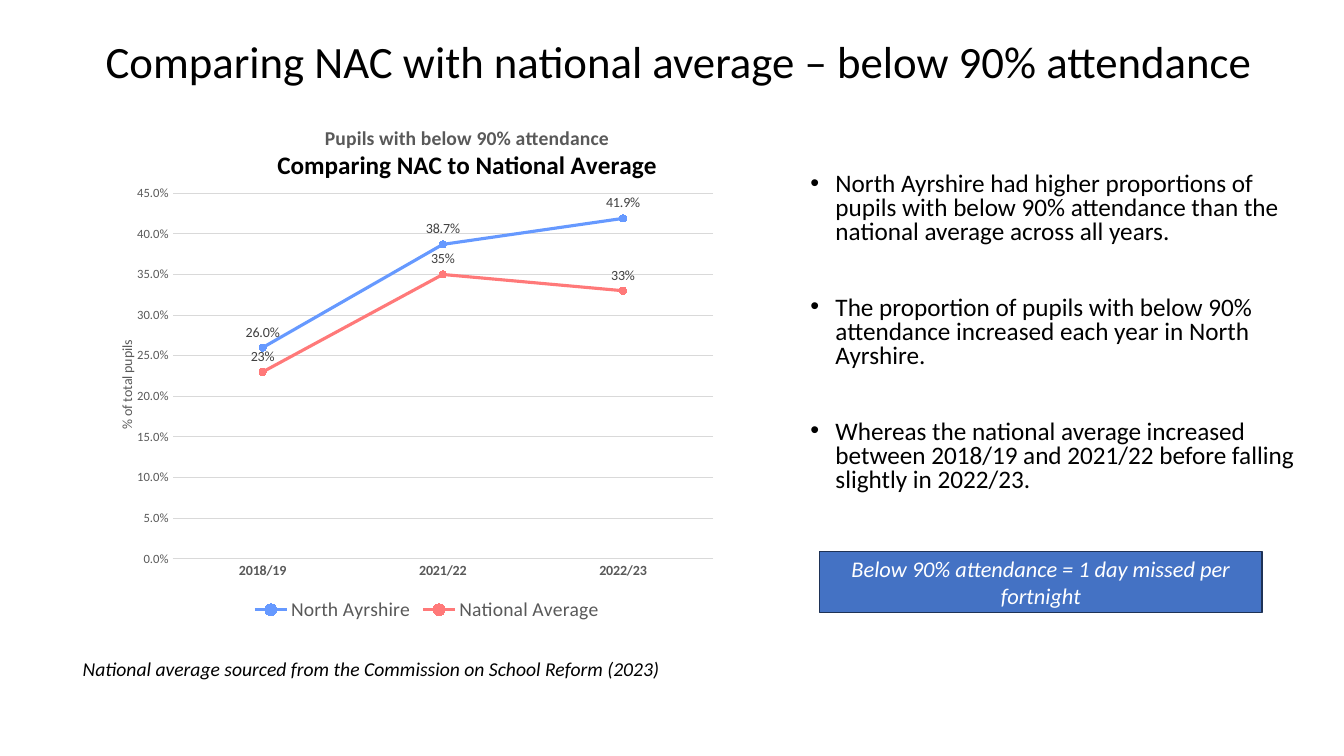
from dataclasses import dataclass

from lxml import etree
from pptx import Presentation
from pptx.chart.data import CategoryChartData
from pptx.dml.color import RGBColor
from pptx.enum.chart import XL_CHART_TYPE, XL_LABEL_POSITION, XL_LEGEND_POSITION, XL_MARKER_STYLE, XL_TICK_MARK
from pptx.enum.shapes import MSO_SHAPE
from pptx.enum.text import MSO_ANCHOR, PP_ALIGN
from pptx.oxml import parse_xml
from pptx.oxml.ns import nsdecls, qn
from pptx.util import Pt

LINE_MARKERS = XL_CHART_TYPE.LINE_MARKERS
ABOVE = XL_LABEL_POSITION.ABOVE
LEGEND_BOTTOM = XL_LEGEND_POSITION.BOTTOM
CIRCLE = XL_MARKER_STYLE.CIRCLE
NO_TICK = XL_TICK_MARK.NONE
RECTANGLE = MSO_SHAPE.RECTANGLE
TOP, MIDDLE = MSO_ANCHOR.TOP, MSO_ANCHOR.MIDDLE
LEFT, CENTER = PP_ALIGN.LEFT, PP_ALIGN.CENTER


@dataclass(frozen=True)
class Theme:
    font: str = "Calibri"
    ink: str = "000000"
    white: str = "FFFFFF"
    muted: str = "595959"
    label: str = "404040"
    grid: str = "D9D9D9"
    callout: str = "4472C4"
    callout_edge: str = "1E3256"
    title: int = 32
    body: int = 18
    callout_size: int = 16
    note: int = 14
    axis: int = 10
    scale: int = 9


THEME = Theme()

TITLE = "Comparing NAC with national average – below 90% attendance"
SOURCE_NOTE = "National average sourced from the Commission on School Reform (2023)"
CALLOUT = "Below 90% attendance = 1 day missed per fortnight"
FINDINGS = [
    "North Ayrshire had higher proportions of pupils with below 90% attendance than the national average across all years.",
    "The proportion of pupils with below 90% attendance increased each year in North Ayrshire.",
    "Whereas the national average increased between 2018/19 and 2021/22 before falling slightly in 2022/23.",
]
CHART_TITLE = [
    ("Pupils with below 90% attendance", THEME.note, THEME.muted),
    ("Comparing NAC to National Average", THEME.body, THEME.ink),
]
VALUE_TITLE = "% of total pupils"
YEARS = ["2018/19", "2021/22", "2022/23"]
SERIES = [
    ("North Ayrshire", [0.26, 0.387, 0.419], "6699FF", "0.0%"),
    ("National Average", [0.23, 0.35, 0.33], "FF7979", "0%"),
]

PAGE_SIZE = (960, 540)
TITLE_AREA = (10, 20, 950, 52)
NOTE_AREA = (52, 466, 627, 25)
CHART_AREA = (77.8, 79.2, 454.3, 367.9)
FINDINGS_AREA = (571.7, 120.2, 360.7, 244)
CALLOUT_AREA = (585.4, 393.8, 316.1, 43.9)
FINDING_GAP = 36.6
BULLET_INDENT = 18


def points(area):
    return [Pt(length) for length in area]


def style(font, size, color, bold=False, italic=False):
    font.name = THEME.font
    font.size = Pt(size)
    font.bold = bold
    font.italic = italic
    font.color.rgb = RGBColor.from_string(color)


def write(box, lines, size, color, align=LEFT, anchor=TOP, italic=False):
    frame = box.text_frame
    frame.word_wrap = True
    frame.vertical_anchor = anchor
    frame.text = "\n".join(lines)
    for para in frame.paragraphs:
        para.alignment = align
        for span in para.runs:
            style(span.font, size, color, italic=italic)
    return frame.paragraphs


def add_bullet(para):
    properties = para._p.get_or_add_pPr()
    properties.set("marL", str(Pt(BULLET_INDENT)))
    properties.set("indent", str(-Pt(BULLET_INDENT)))
    etree.SubElement(properties, qn("a:buFont")).set("typeface", "Arial")
    etree.SubElement(properties, qn("a:buChar")).set("char", "•")


def place(element, x, y, width=None, height=None):
    layout = element.find(qn("c:layout"))
    if layout is not None:
        element.remove(layout)
    parts = [("xMode", "edge"), ("yMode", "edge"), ("x", x), ("y", y)]
    if width:
        parts = [("layoutTarget", "inner")] + parts + [("w", width), ("h", height)]
    inner = "".join(f'<c:{tag} val="{value}"/>' for tag, value in parts)
    layout = parse_xml(f'<c:layout {nsdecls("c")}><c:manualLayout>{inner}</c:manualLayout></c:layout>')
    text = element.find(qn("c:tx"))
    if text is None:
        element.insert(0, layout)
    else:
        text.addnext(layout)


def title_lines(title, lines, bold, x, y):
    frame = title.text_frame
    frame.text = "\n".join(text for text, _, _ in lines)
    for para, (_, size, color) in zip(frame.paragraphs, lines):
        para.alignment = CENTER
        for span in para.runs:
            style(span.font, size, color, bold=bold)
    place(title._element, x, y)


def add_attendance_chart(page):
    data = CategoryChartData()
    data.categories = YEARS
    for name, values, _, number_format in SERIES:
        data.add_series(name, values, number_format)
    chart = page.shapes.add_chart(LINE_MARKERS, *points(CHART_AREA), data).chart
    style(chart.font, THEME.axis, THEME.ink)
    title_lines(chart.chart_title, CHART_TITLE, True, 0.26, 0.02)
    chart.has_legend = True
    chart.legend.position = LEGEND_BOTTOM
    chart.legend.include_in_layout = False
    style(chart.legend.font, THEME.note, THEME.muted)

    years = chart.category_axis
    style(years.tick_labels.font, THEME.axis, THEME.muted, bold=True)
    share = chart.value_axis
    style(share.tick_labels.font, THEME.scale, THEME.muted)
    share.tick_labels.number_format = "0.0%"
    share.tick_labels.number_format_is_linked = False
    share.minimum_scale, share.maximum_scale, share.major_unit = 0, 0.45, 0.05
    share.format.line.fill.background()
    title_lines(share.axis_title, [(VALUE_TITLE, THEME.axis, THEME.muted)], False, 0.01, 0.44)
    for axis in (years, share):
        axis.major_tick_mark = axis.minor_tick_mark = NO_TICK
    for line in (years.format.line, share.major_gridlines.format.line):
        line.color.rgb = RGBColor.from_string(THEME.grid)
        line.width = Pt(0.75)

    plot = chart.plots[0]
    plot.vary_by_categories = False
    place(plot._element.getparent(), 0.1, 0.16, 0.85, 0.71)
    for series, (_, _, color, number_format) in zip(plot.series, SERIES):
        tint = RGBColor.from_string(color)
        series.smooth = False
        series.format.line.color.rgb = tint
        series.format.line.width = Pt(2.25)
        marker = series.marker
        marker.style, marker.size = CIRCLE, 5
        marker.format.fill.solid()
        marker.format.fill.fore_color.rgb = tint
        marker.format.line.color.rgb = tint
        labels = series.data_labels
        labels.show_value = True
        labels.position = ABOVE
        labels.number_format = number_format
        labels.number_format_is_linked = False
        style(labels.font, THEME.axis, THEME.label)


def main():
    deck = Presentation()
    deck.slide_width, deck.slide_height = points(PAGE_SIZE)
    page = deck.slides.add_slide(deck.slide_layouts[6])

    title = page.shapes.add_textbox(*points(TITLE_AREA))
    write(title, [TITLE], THEME.title, THEME.ink, CENTER, MIDDLE)[0].line_spacing = 0.9
    note = page.shapes.add_textbox(*points(NOTE_AREA))
    write(note, [SOURCE_NOTE], THEME.note, THEME.ink, italic=True)
    add_attendance_chart(page)

    findings = page.shapes.add_textbox(*points(FINDINGS_AREA))
    for index, para in enumerate(write(findings, FINDINGS, THEME.body, THEME.ink)):
        para.line_spacing = 0.8
        para.space_before = Pt(FINDING_GAP if index else 0)
        add_bullet(para)

    callout = page.shapes.add_shape(RECTANGLE, *points(CALLOUT_AREA))
    callout.shadow.inherit = False
    callout.fill.solid()
    callout.fill.fore_color.rgb = RGBColor.from_string(THEME.callout)
    callout.line.color.rgb = RGBColor.from_string(THEME.callout_edge)
    callout.line.width = Pt(1)
    write(callout, [CALLOUT], THEME.callout_size, THEME.white, CENTER, MIDDLE, italic=True)
    deck.save("out.pptx")


if __name__ == "__main__":
    main()
